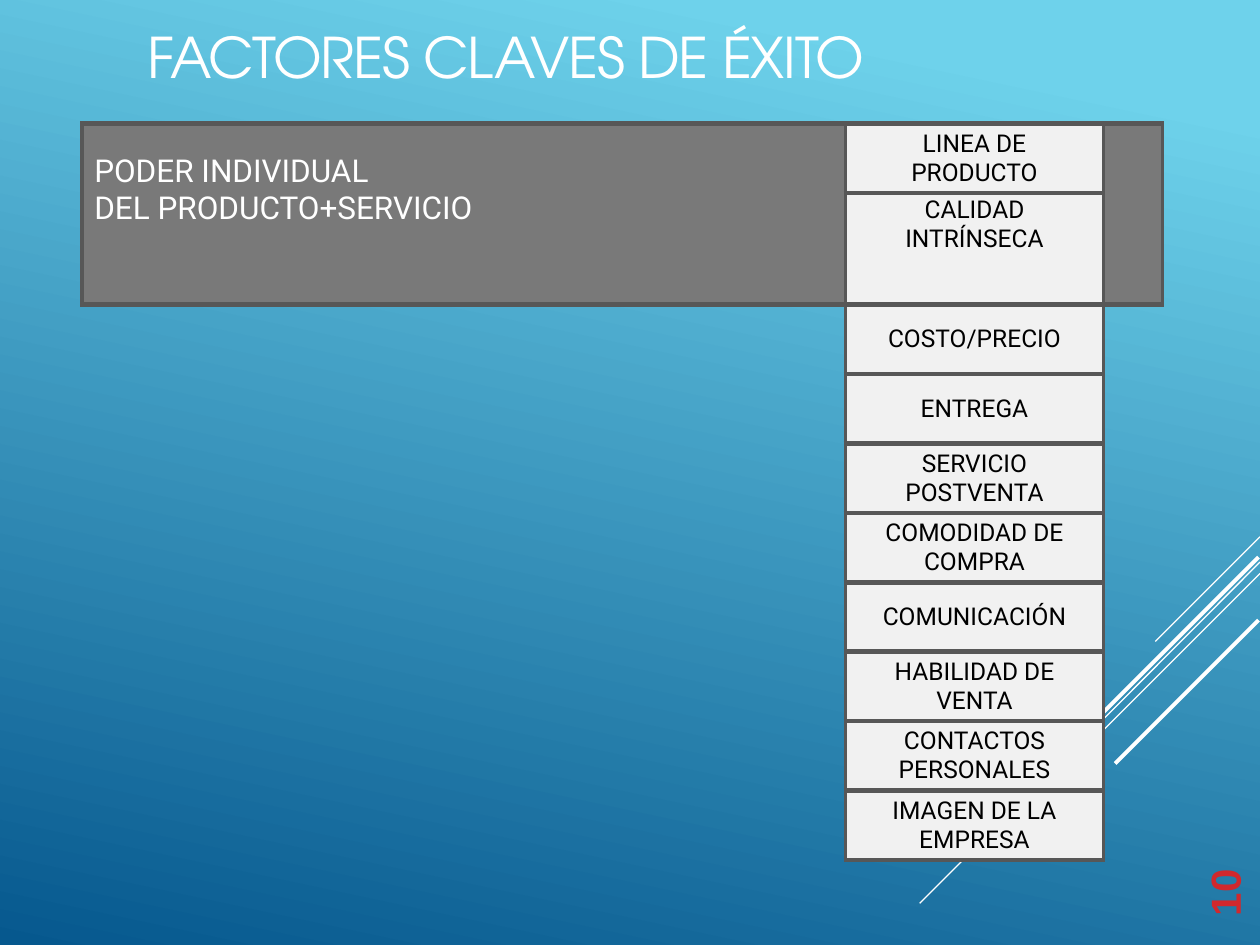
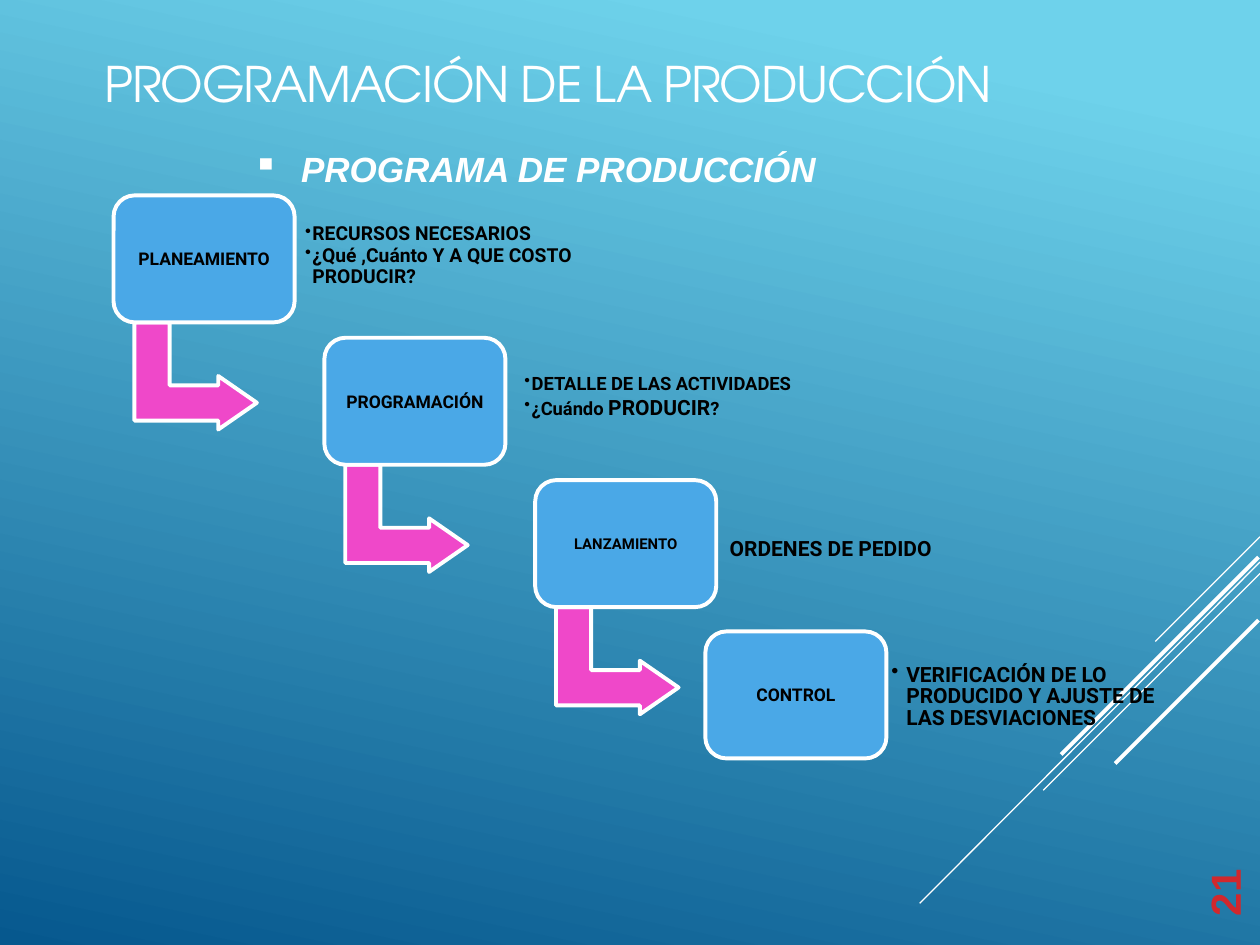
"""Build two slides: key success factors and the production programme."""
from lxml import etree
from pptx import Presentation
from pptx import util as u
from pptx.dml.color import RGBColor
from pptx.enum import shapes, text
from pptx.oxml import ns

Cm, Pt = u.Cm, u.Pt
WHITE = RGBColor(0xFF, 0xFF, 0xFF)
BLACK = RGBColor(0, 0, 0)
SKY = RGBColor(0x6E, 0xD2, 0xEB)
DEEP_BLUE = RGBColor(0x06, 0x58, 0x8E)
RED = RGBColor(0xD1, 0x28, 0x2D)
GREY = RGBColor(0x79, 0x79, 0x79)
PALE_GREY = RGBColor(0xF1, 0xF1, 0xF1)
BORDER = RGBColor(0x57, 0x57, 0x57)
STEP_BLUE = RGBColor(0x4A, 0xA8, 0xE7)
PINK = RGBColor(0xEF, 0x48, 0xC9)
TITLE_FONT, BODY_FONT, ACCENT_FONT = "TeX Gyre Adventor", "Roboto", "Arial"
CENTER, MIDDLE = text.PP_ALIGN.CENTER, text.MSO_ANCHOR.MIDDLE
NO_STYLE = "{2D5ABB26-0587-4C30-8999-92F81FD0307C}"


def write(frame, lines, size, font=BODY_FONT, color=BLACK, bold=False, italic=False,
          align=None, anchor=None, tracking=0, spacing=None, bullet=None,
          bullet_size=100, hang=(0, 0)):
    """Fill a text frame; a line is a string or a list of (words, size)."""
    frame.word_wrap = True
    frame.margin_left = frame.margin_top = frame.margin_right = frame.margin_bottom = 0
    frame.vertical_anchor = anchor
    for index, line in enumerate(lines):
        para = frame.add_paragraph() if index else frame.paragraphs[0]
        para.alignment = align
        para.line_spacing = spacing
        for words, points in [(line, size)] if isinstance(line, str) else line:
            span = para.add_run()
            span.text = words
            span.font.name, span.font.size = font, Pt(points)
            span.font.bold, span.font.italic = bold, italic
            span.font.color.rgb = color
            if tracking:
                span.font._element.set("spc", str(round(tracking * 100)))
        if bullet:
            props = para._p.get_or_add_pPr()
            props.set("marL", str(Cm(hang[0])))
            props.set("indent", str(Cm(hang[1])))
            etree.SubElement(props, ns.qn("a:buSzPct")).set("val", str(bullet_size * 1000))
            etree.SubElement(props, ns.qn("a:buChar")).set("char", bullet)


deck = Presentation()
deck.slide_width, deck.slide_height = Cm(25.4), Cm(19.05)

accent_lines = [
    (25.4, 10.82, 23.29, 12.93, 0.75),
    (25.4, 11.33, 18.54, 18.21, 0.75),
    (25.4, 11.56, 21.03, 15.93, 0.75),
    (25.37, 11.23, 21.39, 15.21, 2.25),
    (25.37, 12.5, 22.48, 15.39, 2.25),
]
headings = [
    ("FACTORES CLAVES DE ÉXITO", "10", (2.97, 0.43, 17.83, 1.42), 32),
    ("PROGRAMACIÓN DE LA PRODUCCIÓN", "21", (2.11, 1.07, 19.91, 1.22), 28),
]
pages = []
for title, number, place, size in headings:
    page = deck.slides.add_slide(deck.slide_layouts[6])
    pages.append(page)
    fill = page.background.fill
    fill.gradient()
    fill.gradient_angle = 258
    for stop, position, color in zip(fill.gradient_stops, (0.1, 1), (SKY, DEEP_BLUE)):
        stop.position = position
        stop.color.rgb = color
    for *ends, width in accent_lines:
        accent = page.shapes.add_connector(shapes.MSO_CONNECTOR.STRAIGHT, *map(Cm, ends))
        accent.line.color.rgb, accent.line.width = WHITE, Pt(width)
        etree.SubElement(accent._element.spPr, ns.qn("a:effectLst"))
    box = page.shapes.add_textbox(*map(Cm, place))
    write(box.text_frame, [title], size, TITLE_FONT, WHITE, anchor=MIDDLE, tracking=-0.7)
    box = page.shapes.add_textbox(Cm(24.21), Cm(17.45), Cm(1.02), Cm(1.02))
    write(box.text_frame, [number], 24, ACCENT_FONT, RED, bold=True, spacing=Pt(27.6))
    box.text_frame._txBody.bodyPr.set("vert", "vert270")
factors_page, programme_page = pages

factors = ["LINEA DE PRODUCTO", "CALIDAD INTRÍNSECA", "COSTO/PRECIO", "ENTREGA",
           "SERVICIO POSTVENTA", "COMODIDAD DE COMPRA", "COMUNICACIÓN",
           "HABILIDAD DE VENTA", "CONTACTOS PERSONALES", "IMAGEN DE LA EMPRESA"]
last = len(factors) - 1
frame = factors_page.shapes.add_table(len(factors), 3, Cm(1.65), Cm(2.49), Cm(21.79), Cm(14.73))
table = frame.table
table.first_row = table.horz_banding = False
table._tbl.tblPr.find(ns.qn("a:tableStyleId")).text = NO_STYLE
for column, width in zip(table.columns, (15.39, 5.21, 1.19)):
    column.width = Cm(width)
for row in table.rows:
    row.height = Cm(1.4)
table.rows[1].height = Cm(2.13)

styled_cells = []
for column in (0, 2):
    table.cell(0, column).merge(table.cell(1, column))
    table.cell(2, column).merge(table.cell(last, column))
    table.cell(2, column).fill.background()
    styled_cells += [(table.cell(0, column), GREY, "LRTB"), (table.cell(2, column), None, "T")]
for row, factor in enumerate(factors):
    cell = table.cell(row, 1)
    write(cell.text_frame, [factor], 14, align=CENTER)
    cell.vertical_anchor = text.MSO_ANCHOR.TOP if row == 1 else MIDDLE
    cell.margin_left = cell.margin_right = Cm(0.6)
    cell.margin_top = cell.margin_bottom = Cm(0.05)
    styled_cells.append((cell, PALE_GREY, "LRTB"))
power = table.cell(0, 0)
write(power.text_frame, ["PODER INDIVIDUAL", "DEL PRODUCTO+SERVICIO"], 18, color=WHITE)
power.margin_left, power.margin_top = Cm(0.25), Cm(0.6)

for cell, color, sides in styled_cells:
    if color is not None:
        cell.fill.solid()
        cell.fill.fore_color.rgb = color
    props = cell._tc.get_or_add_tcPr()
    for index, side in enumerate(sides):
        edge = etree.Element(ns.qn("a:ln" + side), w=str(Pt(2.25 if side in "LR" else 3)))
        paint = etree.SubElement(edge, ns.qn("a:solidFill"))
        etree.SubElement(paint, ns.qn("a:srgbClr")).set("val", str(BORDER))
        props.insert(index, edge)

box = programme_page.shapes.add_textbox(Cm(5.08), Cm(2.97), Cm(11.4), Cm(0.91))
write(box.text_frame, ["PROGRAMA DE PRODUCCIÓN"], 20, ACCENT_FONT, WHITE, bold=True,
      italic=True, bullet="▪", hang=(0.99, -0.97))

STEP_WIDTH, STEP_HEIGHT = 3.65, 2.56
arrow_outline = [(0.71, 0), (0.71, 1.27), (1.69, 1.27), (1.69, 1.08), (2.47, 1.62),
                 (1.69, 2.16), (1.69, 1.98), (0, 1.98), (0, 0)]
short_hang = {"bullet": "•", "bullet_size": 91, "hang": (0.2, -0.15)}
steps = [
    ("PLANEAMIENTO", 10, (6.1, 4.5, 7, 1.37),
     ["RECURSOS NECESARIOS", "¿Qué ,Cuánto Y A QUE COSTO PRODUCIR?"],
     {"size": 11, "spacing": Pt(12.3), **short_hang}),
    ("PROGRAMACIÓN", 10, (10.52, 7.5, 5.89, 1.45),
     ["DETALLE DE LAS ACTIVIDADES", [("¿Cuándo ", 10.5), ("PRODUCIR", 12), ("?", 10.5)]],
     {"size": 10.5, **short_hang}),
    ("LANZAMIENTO", 8.5, (14.71, 10.8, 4.5, 0.56), ["ORDENES DE PEDIDO"], {"size": 12}),
    ("CONTROL", 10, (17.91, 13.4, 6, 1.42),
     ["VERIFICACIÓN DE LO PRODUCIDO Y AJUSTE DE LAS DESVIACIONES"],
     {"size": 12, "spacing": 0.86, "bullet": "•", "hang": (0.36, -0.3)}),
]
for index, (name, name_size, note_place, note, note_format) in enumerate(steps):
    is_last = index == len(steps) - 1
    left, top = (14.22, 12.73) if is_last else (2.29 + 4.25 * index, 3.94 + 2.87 * index)
    parts = []
    if not is_last:
        x, y = left + 0.42, top + STEP_HEIGHT
        outline = [(Cm(x + dx), Cm(y + dy)) for dx, dy in arrow_outline]
        builder = programme_page.shapes.build_freeform(*outline[0])
        builder.add_line_segments(outline[1:], close=True)
        parts.append((builder.convert_to_shape(), PINK))
    step = programme_page.shapes.add_shape(
        shapes.MSO_SHAPE.ROUNDED_RECTANGLE, Cm(left), Cm(top), Cm(STEP_WIDTH), Cm(STEP_HEIGHT))
    write(step.text_frame, [name], name_size, bold=True, align=CENTER, anchor=MIDDLE)
    parts.append((step, STEP_BLUE))
    for part, color in parts:
        part.shadow.inherit = False
        part.fill.solid()
        part.fill.fore_color.rgb = color
        part.line.color.rgb, part.line.width = WHITE, Pt(2.25)
    box = programme_page.shapes.add_textbox(*map(Cm, note_place))
    write(box.text_frame, note, bold=True, **note_format)

deck.save("out.pptx")
